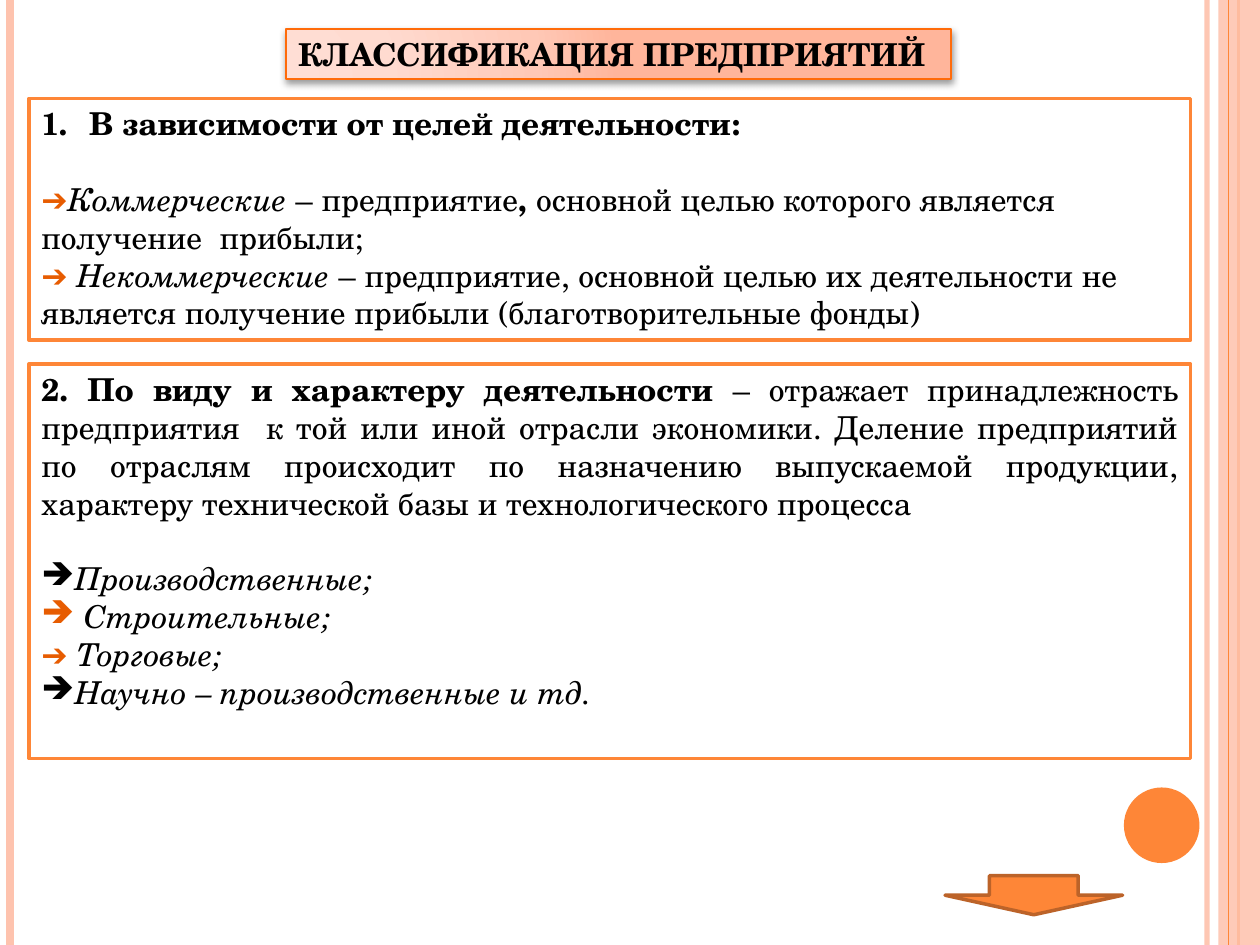
from dataclasses import dataclass

from lxml import etree
from pptx import Presentation
from pptx.dml.color import RGBColor
from pptx.enum import shapes, text
from pptx.oxml import ns, parse_xml
from pptx.util import Inches, Pt


@dataclass(frozen=True)
class Theme:
    font: str = "TeX Gyre Schola"
    size: float = 18
    ink: str = "000000"
    paper: str = "FFFFFF"
    orange: str = "FE8637"
    peach: str = "FEC3AE"
    bullet: str = "E75C01"
    title_line: str = "FF6B0A"
    arrow_line: str = "BC6329"
    title_stops: tuple = ((0, "FFDED5"), (30, "FFDBD0"), (75, "FFC8B6"), (100, "FFB59B"))


T = Theme()
ARROW = "➔"
BLANK_LINE = 21.6  # height of one line of text, in points


def set_alpha(fill_xml, percent):
    color = fill_xml.find(".//" + ns.qn("a:srgbClr"))
    etree.SubElement(color, ns.qn("a:alpha")).set("val", str(percent * 1000))


def add_shape(s, kind, box, fill=None, line=None, width=1, alpha=None):
    sp = s.shapes.add_shape(kind, *map(Inches, box))
    sp.shadow.inherit = False
    if fill:
        sp.fill.solid()
        sp.fill.fore_color.rgb = RGBColor.from_string(fill)
    if alpha:
        set_alpha(sp._element.spPr.find(ns.qn("a:solidFill")), alpha)
    if line:
        sp.line.color.rgb = RGBColor.from_string(line)
        sp.line.width = Pt(width)
    else:
        sp.line.fill.background()
    return sp


def add_rule(s, x, top, height, color, width, alpha=None):
    c = s.shapes.add_connector(shapes.MSO_CONNECTOR.STRAIGHT, Inches(x), Inches(top),
                               Inches(x), Inches(top + height))
    c.line.color.rgb = RGBColor.from_string(color)
    c.line.width = Pt(width)
    if alpha:
        set_alpha(c._element.spPr.find(ns.qn("a:ln")), alpha)
    etree.SubElement(c._element.spPr, ns.qn("a:effectLst"))


def add_run(p, words, bold=False, italic=False, color=T.ink):
    r = p.add_run()
    r.text = words
    f = r.font
    f.name, f.size, f.bold, f.italic = T.font, Pt(T.size), bold, italic
    f.color.rgb = RGBColor.from_string(color)


def add_paragraph(tf, runs, align="LEFT", before=0, bullet=None, number=False, hang=0):
    """Runs are pairs of words and format; the first paragraph of a frame is reused."""
    p = tf.paragraphs[0]
    if p.runs:
        p = tf.add_paragraph()
    p.alignment = getattr(text.PP_ALIGN, align)
    p.space_before = Pt(before)
    pPr = p._p.get_or_add_pPr()
    pPr.set("marL", str(Inches(hang)))
    pPr.set("indent", str(-Inches(hang)))
    if number:
        etree.SubElement(pPr, ns.qn("a:buAutoNum")).set("type", "arabicPeriod")
    elif bullet:
        etree.SubElement(pPr, ns.qn("a:buChar")).set("char", bullet)
    for words, style in runs:
        add_run(p, words, **style)


def add_frame(sp):
    tf = sp.text_frame
    tf.word_wrap = True
    tf.vertical_anchor = text.MSO_ANCHOR.TOP
    return tf


def side_decor(s, left, top, width, height):
    right = left + width
    add_rule(s, right - 0.42, top, height, T.peach, 3, alpha=93)
    add_rule(s, left + 0.08, top, height, T.peach, 4.5)
    add_rule(s, right - 0.17, top, height, T.orange, 1.5)
    add_shape(s, shapes.MSO_SHAPE.RECTANGLE, (right - 0.33, top, 0.33, height), T.peach, alpha=87)
    add_rule(s, right - 0.25, top, height, T.orange, 0.75)
    add_shape(s, shapes.MSO_SHAPE.OVAL, (right - 1.08, top + height - 1.25, 0.6, 0.6), T.orange)


def title(s, *box):
    sp = add_shape(s, shapes.MSO_SHAPE.RECTANGLE, box, line=T.title_line)
    spPr = sp._element.spPr
    stops = "".join(f'<a:gs pos="{pos * 1000}"><a:srgbClr val="{color}"/></a:gs>'
                    for pos, color in T.title_stops)
    spPr.find(ns.qn("a:prstGeom")).addnext(parse_xml(
        f'<a:gradFill {ns.nsdecls("a")} rotWithShape="1"><a:gsLst>{stops}</a:gsLst>'
        '<a:path path="circle"><a:fillToRect l="5000" t="100000" r="120000" b="10000"/>'
        '</a:path></a:gradFill>'))
    spPr.find(ns.qn("a:effectLst")).append(parse_xml(
        f'<a:outerShdw {ns.nsdecls("a")} blurRad="{Pt(4)}" dist="{Pt(2)}" dir="5400000" '
        f'rotWithShape="0"><a:srgbClr val="{T.ink}"><a:alpha val="40000"/></a:srgbClr>'
        '</a:outerShdw>'))
    add_paragraph(add_frame(sp), [("КЛАССИФИКАЦИЯ ПРЕДПРИЯТИЙ", BOLD)])


def text_panel(s, box, paragraphs):
    sp = add_shape(s, shapes.MSO_SHAPE.RECTANGLE, box, T.paper, T.orange, 2)
    tf = add_frame(sp)
    for runs, layout in paragraphs:
        add_paragraph(tf, runs, **layout)


def next_arrow(s, *box):
    add_shape(s, shapes.MSO_SHAPE.DOWN_ARROW, box, T.orange, T.arrow_line, 2)


PLAIN, BOLD, ITALIC = {}, {"bold": True}, {"italic": True}
MARK = {"bold": True, "color": T.bullet}
AFTER_GAP = {"before": BLANK_LINE}

GOALS = [
    ([("В зависимости от целей деятельности:", BOLD)], {"number": True, "hang": 0.38}),
    ([(ARROW, MARK), ("Коммерческие ", ITALIC), ("– предприятие", PLAIN), (", ", BOLD),
      ("основной целью которого является получение  прибыли;", PLAIN)], AFTER_GAP),
    ([(ARROW + " ", MARK), ("Некоммерческие ", ITALIC),
      ("– предприятие, основной целью их деятельности не является получение прибыли "
       "(благотворительные фонды)", PLAIN)], {}),
]
ACTIVITIES = [
    ([("2. По виду и характеру деятельности ", BOLD),
      ("– отражает принадлежность предприятия  к той или иной отрасли экономики. "
       "Деление предприятий по отраслям происходит по назначению выпускаемой продукции, "
       "характеру технической базы и технологического процесса ", PLAIN)],
     {"align": "JUSTIFY"}),
    ([("Производственные;", ITALIC)], {"bullet": ARROW, **AFTER_GAP}),
    ([(" ", MARK), ("Строительные;", ITALIC)], {"bullet": ARROW}),
    ([(ARROW + " ", MARK), ("Торговые;", ITALIC)], {}),
    ([("Научно – производственные и тд.", ITALIC)], {"bullet": ARROW}),
]


def main():
    prs = Presentation()
    prs.slide_width, prs.slide_height = Inches(10), Inches(7.5)
    s = prs.slides.add_slide(prs.slide_layouts[6])
    side_decor(s, 0, 0, 10, 7.5)
    title(s, 2.27, 0.23, 5.28, 0.4)
    text_panel(s, (0.23, 0.78, 9.22, 1.92), GOALS)
    text_panel(s, (0.23, 2.89, 9.22, 3.13), ACTIVITIES)
    next_arrow(s, 7.5, 6.95, 1.41, 0.31)
    prs.save("out.pptx")


if __name__ == "__main__":
    main()
